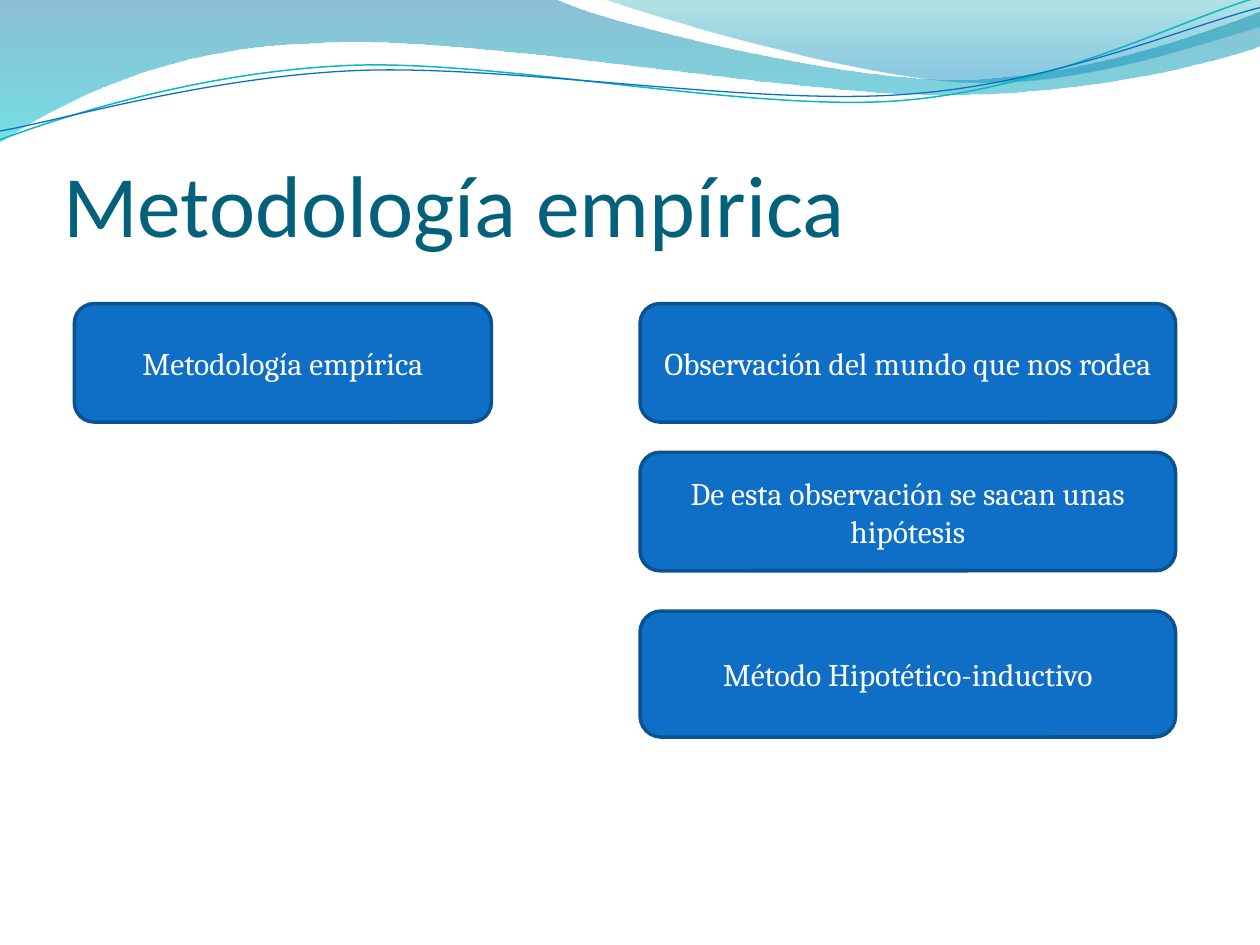
from math import cos, radians, sin

from lxml import etree
from pptx import Presentation
from pptx.dml.color import RGBColor
from pptx.enum.shapes import MSO_SHAPE
from pptx.enum.text import MSO_ANCHOR as ANCHOR, PP_ALIGN as ALIGN
from pptx.oxml.ns import qn
from pptx.util import Inches, Pt

LINE_TILT = 357.3

# A segment of one point is a straight line; of three points, a Bezier curve
BACK_WAVE = [
    [(0, 0)], [(4.4, -0.01)],
    [(4.76, 0.17), (6.64, 0.63), (7.58, 0.63)],
    [(8.53, 0.63), (9.58, 0.26), (10, 0.09)],
    [(10.01, 0.36)],
    [(9.83, 0.44), (8.7, 0.76), (7.46, 0.75)],
    [(6.22, 0.75), (3.82, 0.28), (2.57, 0.34)],
    [(1.29, 0.36), (0.46, 0.83), (-0.01, 1.13)],
    [(0, 0)],
]
FRONT_WAVE = [
    [(4.79, -0.01)],
    [(5.09, 0.11), (6.82, 0.62), (7.69, 0.65)],
    [(8.56, 0.69), (9.61, 0.32), (10, 0.21)],
    [(10, 0)], [(4.79, -0.01)],
]
TEAL_LINE = [
    [(0, 1.11)],
    [(0.48, 0.93), (1.58, 0.57), (2.77, 0.52)],
    [(3.95, 0.47), (5.93, 0.89), (7.13, 0.8)],
    [(8.33, 0.71), (9.38, 0.15), (9.98, -0.02)],
]
BLUE_LINE = [
    [(0, 1.04)],
    [(0.47, 0.96), (1.64, 0.61), (2.83, 0.56)],
    [(4.03, 0.51), (5.97, 0.84), (7.17, 0.75)],
    [(8.36, 0.67), (9.41, 0.21), (10, 0.06)],
]


def rgb(color):
    return RGBColor.from_string(color)


def add_outline(s, outline, frame, close, tilt=0):
    """Freeform with true curves; the tilt turns it about the frame's centre."""
    left, top, width, height = frame
    ends = [tuple(map(Inches, seg[-1])) for seg in outline]
    builder = s.shapes.build_freeform(*ends[0])
    builder.add_line_segments(ends[1:], close=close)
    sp = builder.convert_to_shape()
    sp.left, sp.top, sp.width, sp.height = map(Inches, frame)
    sp.rotation = tilt
    sp.shadow.inherit = False

    def local(x, y):
        a = radians(-tilt)
        dx, dy = x - left - width / 2, y - top - height / 2
        return (Inches(width / 2 + dx * cos(a) - dy * sin(a)),
                Inches(height / 2 + dx * sin(a) + dy * cos(a)))

    # Swap the straight segments for lines and curves in frame coordinates
    geometry = next(sp._element.iter(qn("a:path")))
    geometry.set("w", str(sp.width))
    geometry.set("h", str(sp.height))
    for child in list(geometry):
        geometry.remove(child)
    for i, seg in enumerate(outline):
        tag = "a:moveTo" if i == 0 else "a:lnTo" if len(seg) == 1 else "a:cubicBezTo"
        command = etree.SubElement(geometry, qn(tag))
        for point in seg:
            x, y = local(*point)
            etree.SubElement(command, qn("a:pt"), x=str(x), y=str(y))
    if close:
        etree.SubElement(geometry, qn("a:close"))
    return sp


def add_wave(s, outline, frame, stops):
    """Filled wave; stops are (position, colour, opacity in percent)."""
    sp = add_outline(s, outline, frame, close=True)
    sp.line.fill.background()
    sp.fill.gradient()
    sp.fill.gradient_angle = 270
    for stop, (position, color, _) in zip(sp.fill.gradient_stops, stops):
        stop.position = position
        stop.color.rgb = rgb(color)
    colors = list(sp._element.spPr.iter(qn("a:srgbClr")))
    for clr, (_, _, opacity) in zip(colors, stops):
        etree.SubElement(clr, qn("a:alpha"), val=str(opacity * 1000))


def add_curve(s, outline, frame, color, width):
    sp = add_outline(s, outline, frame, close=False, tilt=LINE_TILT)
    sp.fill.background()
    sp.line.color.rgb = rgb(color)
    sp.line.width = Pt(width)


def add_header(s):
    add_wave(s, BACK_WAVE, (-0.01, -0.01, 10.02, 1.14),
             [(0, "0074A1", 45), (1, "00C6CF", 55)])
    add_wave(s, FRONT_WAVE, (4.79, -0.01, 5.21, 0.7),
             [(0, "00A1A9", 30), (0.8, "008BBF", 45)])
    add_curve(s, TEAL_LINE, (-0.02, 0.22, 10.02, 0.71), "0AB8BF", 0.85)
    add_curve(s, BLUE_LINE, (-0.02, 0.3, 10.03, 0.58), "0F6FC6", 0.75)


def format_text(tf, text, font, size, color, align):
    tf.word_wrap = True
    tf.text = text
    p = tf.paragraphs[0]
    p.alignment = align
    r = p.runs[0]
    r.font.name = font
    r.font.size = Pt(size)
    r.font.color.rgb = rgb(color)


def add_title(s, text, left, top, width, height):
    box = s.shapes.add_textbox(*map(Inches, (left, top, width, height)))
    tf = box.text_frame
    tf.vertical_anchor = ANCHOR.BOTTOM
    tf.margin_left = tf.margin_right = tf.margin_bottom = 0
    format_text(tf, text, "Calibri", 50, "04617B", ALIGN.LEFT)


def add_card(s, text, left, top, width, height):
    sp = s.shapes.add_shape(MSO_SHAPE.ROUNDED_RECTANGLE,
                            *map(Inches, (left, top, width, height)))
    sp.shadow.inherit = False
    sp.fill.solid()
    sp.fill.fore_color.rgb = rgb("0F6FC6")
    sp.line.color.rgb = rgb("0B5292")
    sp.line.width = Pt(2)
    sp.text_frame.vertical_anchor = ANCHOR.MIDDLE
    format_text(sp.text_frame, text, "Cambria", 18, "FFFFFF", ALIGN.CENTER)


def add_steps(s, left, width, steps):
    """Column of cards; steps are (text, top, height)."""
    for text, top, height in steps:
        add_card(s, text, left, top, width, height)


def main():
    prs = Presentation()
    prs.slide_width, prs.slide_height = Inches(10), Inches(7.5)
    s = prs.slides.add_slide(prs.slide_layouts[6])

    # Wave band and title
    add_header(s)
    add_title(s, "Metodología empírica", 0.5, 0.77, 9.08, 1.25)

    # Method on the left, its steps on the right
    add_card(s, "Metodología empírica", 0.59, 2.41, 3.31, 0.94)
    add_steps(s, 5.08, 4.25, [
        ("Observación del mundo que nos rodea", 2.41, 0.94),
        ("De esta observación se sacan unas hipótesis", 3.59, 0.94),
        ("Método Hipotético-inductivo", 4.85, 1),
    ])
    prs.save("out.pptx")


if __name__ == "__main__":
    main()
